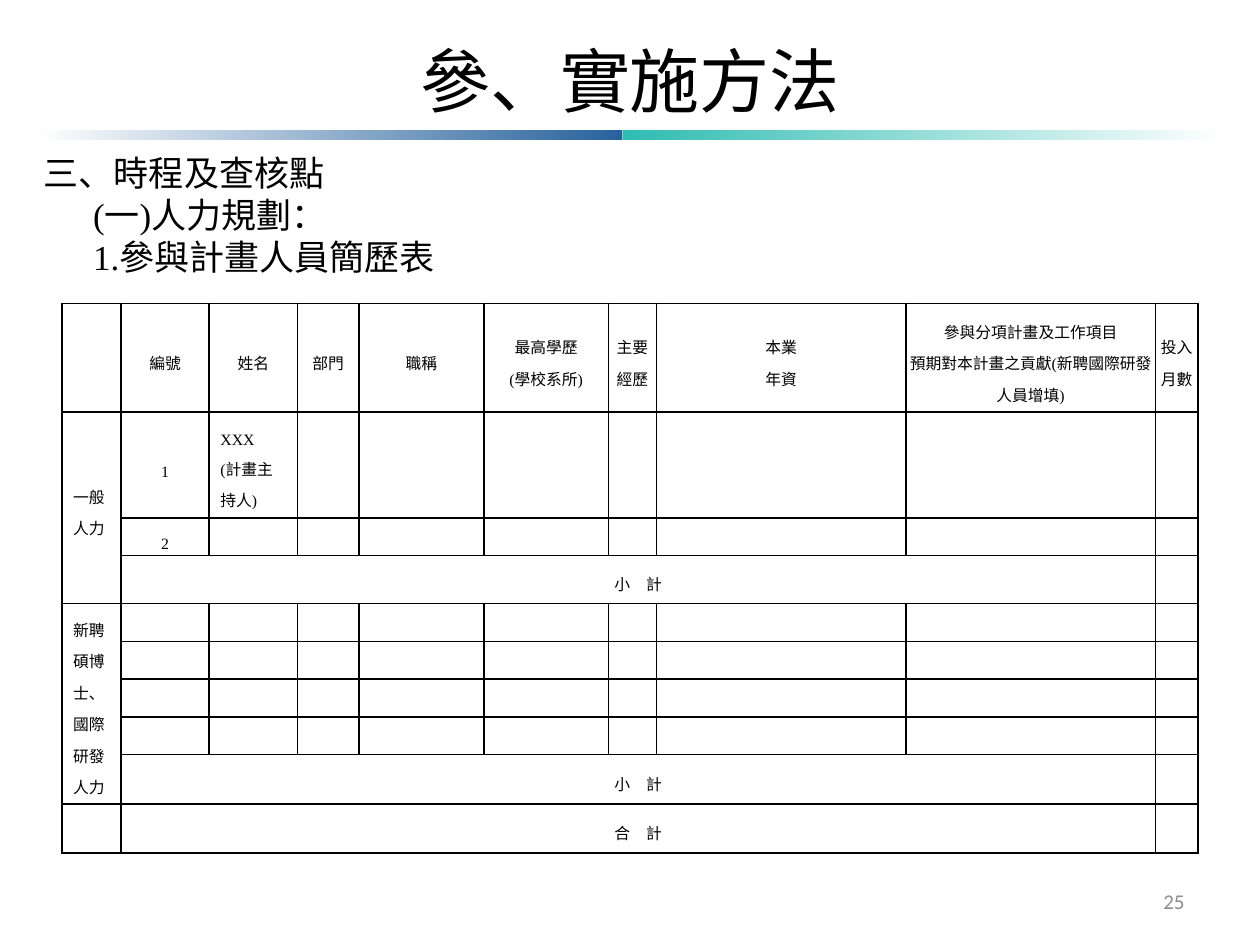
from dataclasses import dataclass

from lxml.etree import SubElement
from pptx import Presentation
from pptx.dml.color import RGBColor
from pptx.enum.shapes import MSO_SHAPE
from pptx.enum.text import MSO_ANCHOR, PP_ALIGN
from pptx.oxml.ns import qn
from pptx.util import Inches, Pt


@dataclass(frozen=True)
class Theme:
    serif: str = "Times New Roman"
    sans: str = "Calibri"
    black: str = "000000"
    white: str = "FFFFFF"
    blue: str = "28629C"
    teal: str = "2FBCB2"
    gray: str = "8C8C8C"
    title_size: int = 40
    body_size: int = 20
    number_size: int = 12
    table_size: int = 9
    table_leading: int = 18
    border_width: int = 1


TIGHT = (0.01, 0.01, 0.01, 0)
ROOMY = (0.09, 0.04, 0.09, 0.04)


class SlideBuilder:
    """Places elements on a grid of 100 columns by 75 rows."""

    def __init__(self, presentation, theme):
        self.theme = theme
        self.column = presentation.slide_width / 100
        self.row = presentation.slide_height / 75
        self.slide = presentation.slides.add_slide(presentation.slide_layouts[6])

    def box(self, left, top, width, height):
        return (round(left * self.column), round(top * self.row),
                round(width * self.column), round(height * self.row))

    def add_run(self, paragraph, text, size, font=None, color=None):
        run = paragraph.add_run()
        run.text = text
        run.font.size = Pt(size)
        run.font.name = font or self.theme.serif
        run.font.color.rgb = RGBColor.from_string(color or self.theme.black)

    def gradient_bar(self, area, start, end):
        shape = self.slide.shapes.add_shape(MSO_SHAPE.RECTANGLE, *self.box(*area))
        shape.shadow.inherit = False
        shape.line.fill.background()
        shape.fill.gradient()
        shape.fill.gradient_angle = 0
        for stop, color in zip(shape.fill.gradient_stops, (start, end)):
            stop.color.rgb = RGBColor.from_string(color)

    def text(self, area, lines, size, align, anchor=MSO_ANCHOR.TOP,
             font=None, color=None):
        """Each line is a pair of its indent in columns and its wording."""
        frame = self.slide.shapes.add_textbox(*self.box(*area)).text_frame
        frame.word_wrap = True
        frame.vertical_anchor = anchor
        for index, (indent, wording) in enumerate(lines):
            paragraph = frame.add_paragraph() if index else frame.paragraphs[0]
            paragraph.alignment = align
            if indent:
                properties = paragraph._p.get_or_add_pPr()
                properties.set("marL", str(round(indent * self.column)))
                properties.set("indent", "0")
            self.add_run(paragraph, wording, size, font, color)

    def table(self, left, top, widths, heights):
        area = self.box(left, top, sum(widths), sum(heights))
        table = self.slide.shapes.add_table(len(heights), len(widths), *area).table
        table.first_row = table.horz_banding = False
        for column, width in zip(table.columns, widths):
            column.width = round(width * self.column)
        for row, height in zip(table.rows, heights):
            row.height = round(height * self.row)
        for cell in table.iter_cells():
            self.border(cell)
            cell.fill.background()
            self.margins(cell, TIGHT)
            # Small type keeps empty rows low
            end = cell.text_frame.paragraphs[0]._p.get_or_add_endParaRPr()
            end.set("sz", str(self.theme.table_size * 100))
        return table

    def border(self, cell):
        properties = cell._tc.get_or_add_tcPr()
        for side in ("a:lnL", "a:lnR", "a:lnT", "a:lnB"):
            line = SubElement(properties, qn(side), w=str(Pt(self.theme.border_width)))
            fill = SubElement(line, qn("a:solidFill"))
            SubElement(fill, qn("a:srgbClr"), val=self.theme.black)

    def margins(self, cell, inset):
        (cell.margin_left, cell.margin_top,
         cell.margin_right, cell.margin_bottom) = map(Inches, inset)

    def cell_text(self, cell, lines, inset=TIGHT, align=PP_ALIGN.CENTER,
                  anchor=MSO_ANCHOR.MIDDLE):
        self.margins(cell, inset)
        cell.vertical_anchor = anchor
        for index, wording in enumerate(lines):
            frame = cell.text_frame
            paragraph = frame.add_paragraph() if index else frame.paragraphs[0]
            paragraph.alignment = align
            paragraph.line_spacing = Pt(self.theme.table_leading)
            self.add_run(paragraph, wording, self.theme.table_size)


def add_staff_table(builder):
    widths = [4.7, 7, 7, 4.9, 9.9, 9.9, 3.8, 19.8, 19.8, 3.4]
    heights = [8.6, 8.4, 3, 3.8, 3, 3, 3, 3, 3.9, 3.9]
    table = builder.table(4.9, 24.1, widths, heights)

    # Column headings
    headings = [
        ["編號"], ["姓名"], ["部門"], ["職稱"],
        ["最高學歷", "(學校系所)"], ["主要", "經歷"], ["本業", "年資"],
        ["參與分項計畫及工作項目", "預期對本計畫之貢獻(新聘國際研發人員增填)"],
        ["投入", "月數"],
    ]
    for column, lines in enumerate(headings, start=1):
        builder.cell_text(table.cell(0, column), lines)

    # Staff groups down the left side
    for first, last, name in ((1, 3, "一般人力"), (4, 8, "新聘碩博士、國際研發人力")):
        group = table.cell(first, 0)
        group.merge(table.cell(last, 0))
        builder.cell_text(group, [name], ROOMY, PP_ALIGN.LEFT)

    # Listed people
    for row in (1, 2):
        builder.cell_text(table.cell(row, 1), [str(row)])
    builder.cell_text(table.cell(1, 2), ["XXX", "(計畫主持人)"], ROOMY,
                      PP_ALIGN.LEFT, MSO_ANCHOR.TOP)

    # Subtotals and total
    for row, label in ((3, "小　計"), (8, "小　計"), (9, "合　計")):
        total = table.cell(row, 1)
        total.merge(table.cell(row, 8))
        builder.cell_text(total, [label], ROOMY)


def main():
    presentation = Presentation()
    presentation.slide_width, presentation.slide_height = Inches(10), Inches(7.5)
    theme = Theme()
    builder = SlideBuilder(presentation, theme)

    # Title over a two-tone rule
    builder.gradient_bar((2.8, 10.3, 46.6, 0.8), theme.white, theme.blue)
    builder.gradient_bar((49.4, 10.3, 47.8, 0.8), theme.teal, theme.white)
    builder.text((5, 1.3, 90, 10.1), [(0, "參、實施方法")], theme.title_size,
                 PP_ALIGN.CENTER, MSO_ANCHOR.MIDDLE)

    # Section headings
    headings = [(0, "三、時程及查核點"), (3.9, "(一)人力規劃："),
                (3.9, "1.參與計畫人員簡歷表")]
    builder.text((2.5, 11.5, 90, 11.1), headings, theme.body_size, PP_ALIGN.JUSTIFY)

    add_staff_table(builder)

    # Slide number
    builder.text((71.7, 69.5, 23.3, 4), [(0, "25")], theme.number_size,
                 PP_ALIGN.RIGHT, MSO_ANCHOR.MIDDLE, theme.sans, theme.gray)

    presentation.save("out.pptx")


if __name__ == "__main__":
    main()
